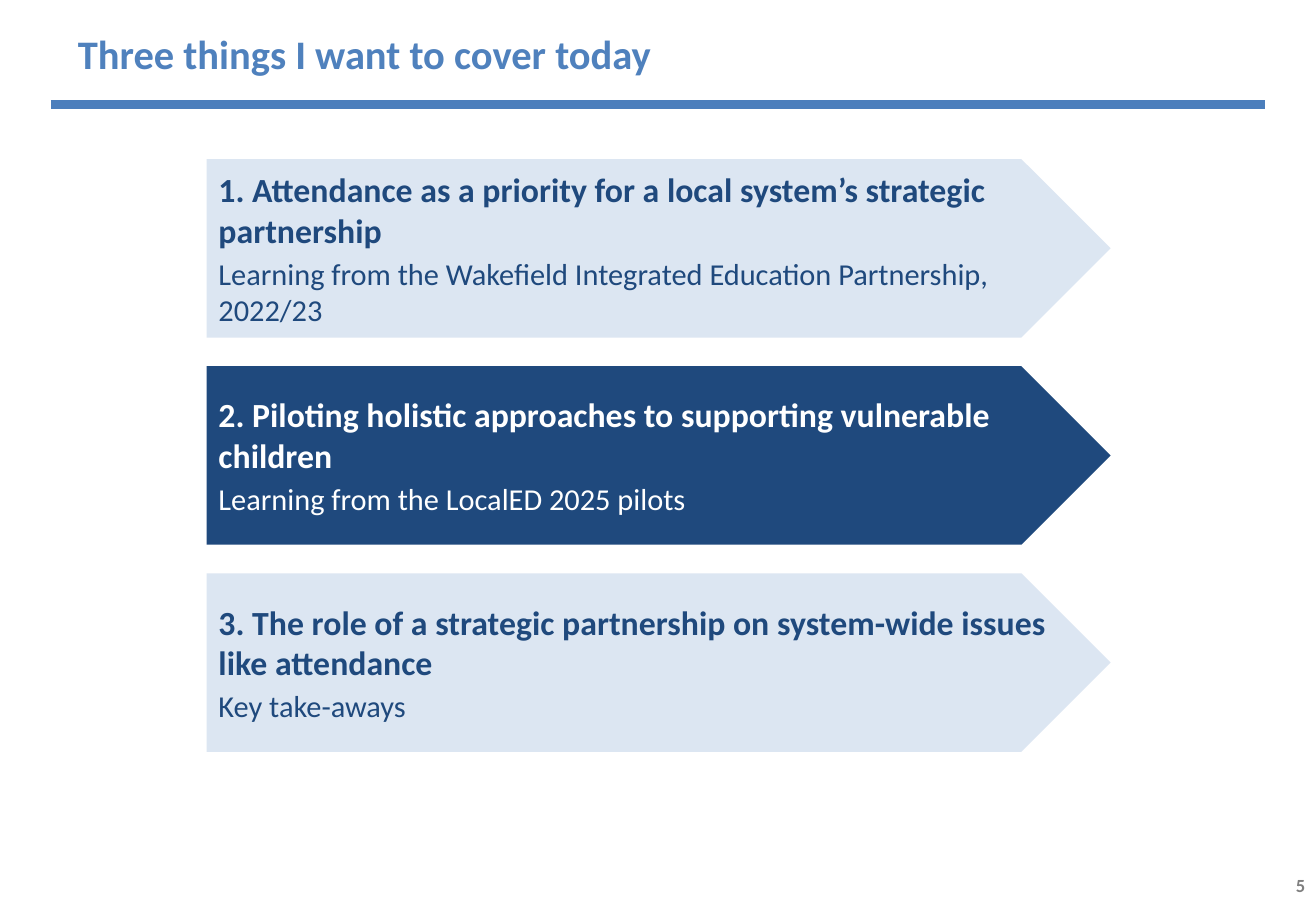
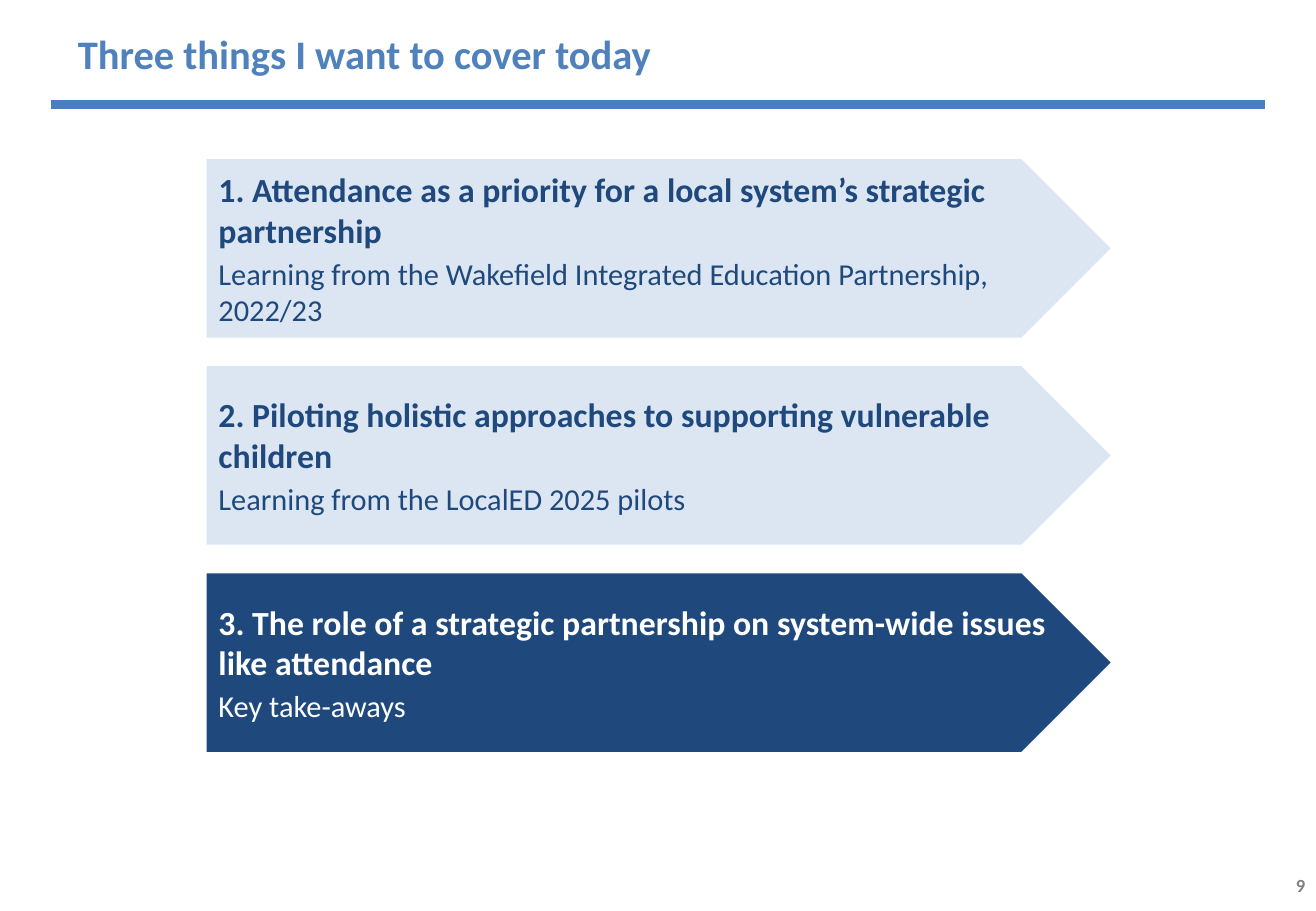
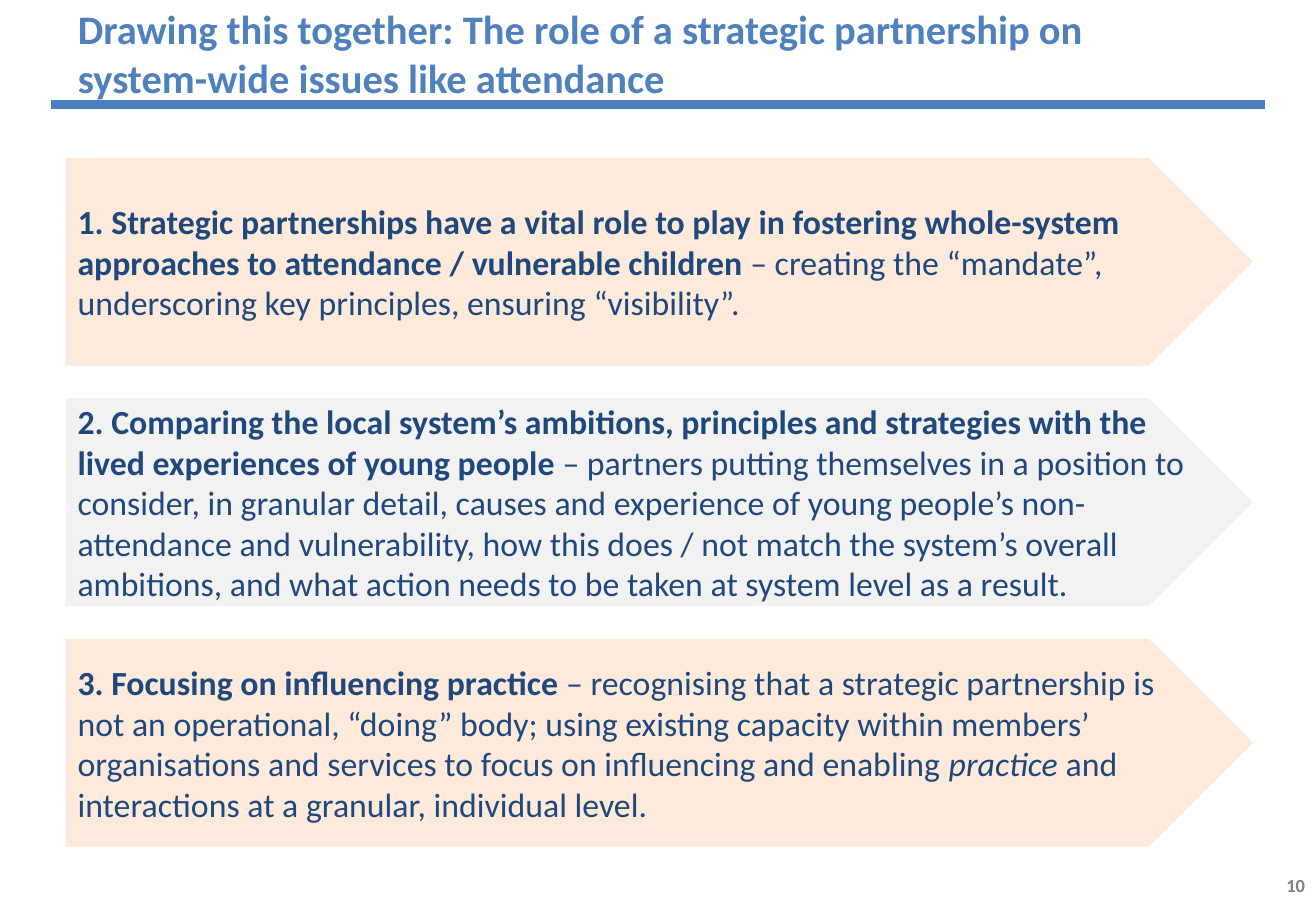
from dataclasses import dataclass
from typing import Any

from lxml.etree import SubElement
from pptx import Presentation
from pptx.dml.color import RGBColor
from pptx.enum.shapes import MSO_CONNECTOR, MSO_SHAPE
from pptx.enum.text import MSO_ANCHOR, MSO_AUTO_SIZE, PP_ALIGN
from pptx.oxml.ns import qn
from pptx.util import Inches, Pt

# Shared style
FONT = "Calibri"
TITLE_BLUE = "4F81BD"
RULE_BLUE = "4B7EBC"
NAVY = "1F497D"
PALE_BLUE = "DCE6F2"
PEACH = "FDEADA"
LIGHT_GREY = "F2F2F2"
GREY = "808080"
WHITE = "FFFFFF"


@dataclass(frozen=True)
class Span:
    text: str
    size: int = 20
    bold: bool = False
    italic: bool = False


Paragraphs = list[list[Span]]


@dataclass(frozen=True)
class Arrow:
    paragraphs: Paragraphs
    fill: str
    color: str = NAVY


@dataclass(frozen=True)
class Stack:
    """A column of equal arrows, spread evenly from top to bottom."""
    left: float
    top: float
    width: float
    bottom: float
    arrow_height: float


AGENDA_STACK = Stack(left=1.7, top=1.31, width=7.44, bottom=6.19, arrow_height=1.47)
SUMMARY_STACK = Stack(left=0.54, top=1.3, width=9.77, bottom=6.97, arrow_height=1.71)

AGENDA_TITLE = "Three things I want to cover today"
AGENDA = [
    ("1. Attendance as a priority for a local system’s strategic partnership",
     "Learning from the Wakefield Integrated Education Partnership, 2022/23"),
    ("2. Piloting holistic approaches to supporting vulnerable children",
     "Learning from the LocalED 2025 pilots"),
    ("3. The role of a strategic partnership on system-wide issues like attendance",
     "Key take-aways"),
]

SUMMARY_TITLE = ("Drawing this together: The role of a strategic partnership on "
                 "system-wide issues like attendance")
SUMMARY = [
    Arrow([[
        Span("1. Strategic partnerships have a vital role to play in fostering "
             "whole-system approaches to attendance / vulnerable children", bold=True),
        Span(" – creating the “mandate”, underscoring key principles, "
             "ensuring “visibility”."),
    ]], PEACH),
    Arrow([[
        Span("2. Comparing the local system’s ambitions, principles and strategies "
             "with the lived experiences of young people", bold=True),
        Span(" – partners putting themselves in a position to consider, in granular "
             "detail, causes and experience of young people’s non-attendance and "
             "vulnerability, how this does / not match the system’s overall "
             "ambitions, and what action needs to be taken at system level as a result."),
    ]], LIGHT_GREY),
    Arrow([[
        Span("3. Focusing on influencing practice", bold=True),
        Span(" – recognising that a strategic partnership is not an operational, "
             "“doing” body; using existing capacity within members’ organisations "
             "and services to focus on influencing and enabling "),
        Span("practice ", italic=True),
        Span("and interactions at a granular, individual level."),
    ]], PEACH),
]


def rgb(value: str) -> RGBColor:
    return RGBColor.from_string(value)


def set_attributes(target: Any, values: dict[str, Any]) -> None:
    for name, value in values.items():
        setattr(target, name, value)


def write_text(box: Any, paragraphs: Paragraphs, color: str,
               align: PP_ALIGN = PP_ALIGN.LEFT, space_after: int = 0) -> None:
    frame = box.text_frame
    set_attributes(frame, {
        "word_wrap": True,
        "auto_size": MSO_AUTO_SIZE.NONE,
        "vertical_anchor": MSO_ANCHOR.MIDDLE,
        "margin_left": Inches(0.1), "margin_right": Inches(0.1),
        "margin_top": Inches(0.05), "margin_bottom": Inches(0.05),
    })
    for index, spans in enumerate(paragraphs):
        para = frame.add_paragraph() if index else frame.paragraphs[0]
        set_attributes(para, {"alignment": align, "space_after": Pt(space_after)})
        for span in spans:
            run = para.add_run()
            run.text = span.text
            set_attributes(run.font, {"name": FONT, "size": Pt(span.size),
                                      "bold": span.bold, "italic": span.italic})
            run.font.color.rgb = rgb(color)


def add_page(deck: Any, title: str, number: int) -> Any:
    """Add a slide with its rule, title and page number."""
    page = deck.slides.add_slide(deck.slide_layouts[5])

    # Rule below the title
    rule = page.shapes.add_connector(MSO_CONNECTOR.STRAIGHT, Inches(0.42), Inches(0.86),
                                     Inches(10.41), Inches(0.86))
    rule.line.width = Pt(5)
    rule.line.color.rgb = rgb(RULE_BLUE)
    SubElement(rule.element.spPr, qn("a:effectLst"))

    # Title
    heading = page.shapes.title
    set_attributes(heading, {"left": Inches(0.54), "top": Inches(-0.04),
                             "width": Inches(8.62), "height": Inches(0.95)})
    write_text(heading, [[Span(title, 24, bold=True)]], TITLE_BLUE)

    # Page number
    box = page.shapes.add_textbox(Inches(8.31), Inches(7.07), Inches(2.53), Inches(0.43))
    write_text(box, [[Span(str(number), 11, bold=True)]], GREY, PP_ALIGN.RIGHT)
    return page


def add_arrows(page: Any, stack: Stack, arrows: list[Arrow]) -> None:
    pitch = (stack.bottom - stack.top - stack.arrow_height) / (len(arrows) - 1)
    for index, arrow in enumerate(arrows):
        shape = page.shapes.add_shape(
            MSO_SHAPE.PENTAGON, Inches(stack.left), Inches(stack.top + index * pitch),
            Inches(stack.width), Inches(stack.arrow_height))
        shape.shadow.inherit = False
        shape.fill.solid()
        shape.fill.fore_color.rgb = rgb(arrow.fill)
        shape.line.fill.background()
        write_text(shape, arrow.paragraphs, arrow.color, space_after=3)


def agenda_arrows(current: int) -> list[Arrow]:
    """Agenda items, with the current one picked out in navy."""
    return [
        Arrow([[Span(topic, bold=True)], [Span(detail, 18)]],
              *((NAVY, WHITE) if item == current else (PALE_BLUE, NAVY)))
        for item, (topic, detail) in enumerate(AGENDA, start=1)
    ]


def main() -> None:
    deck = Presentation()
    set_attributes(deck, {"slide_width": Inches(10.83), "slide_height": Inches(7.5)})

    # Agenda pages
    for number, current in ((5, 2), (9, 3)):
        add_arrows(add_page(deck, AGENDA_TITLE, number), AGENDA_STACK, agenda_arrows(current))

    # Summary page
    add_arrows(add_page(deck, SUMMARY_TITLE, 10), SUMMARY_STACK, SUMMARY)

    deck.save("out.pptx")


if __name__ == "__main__":
    main()
